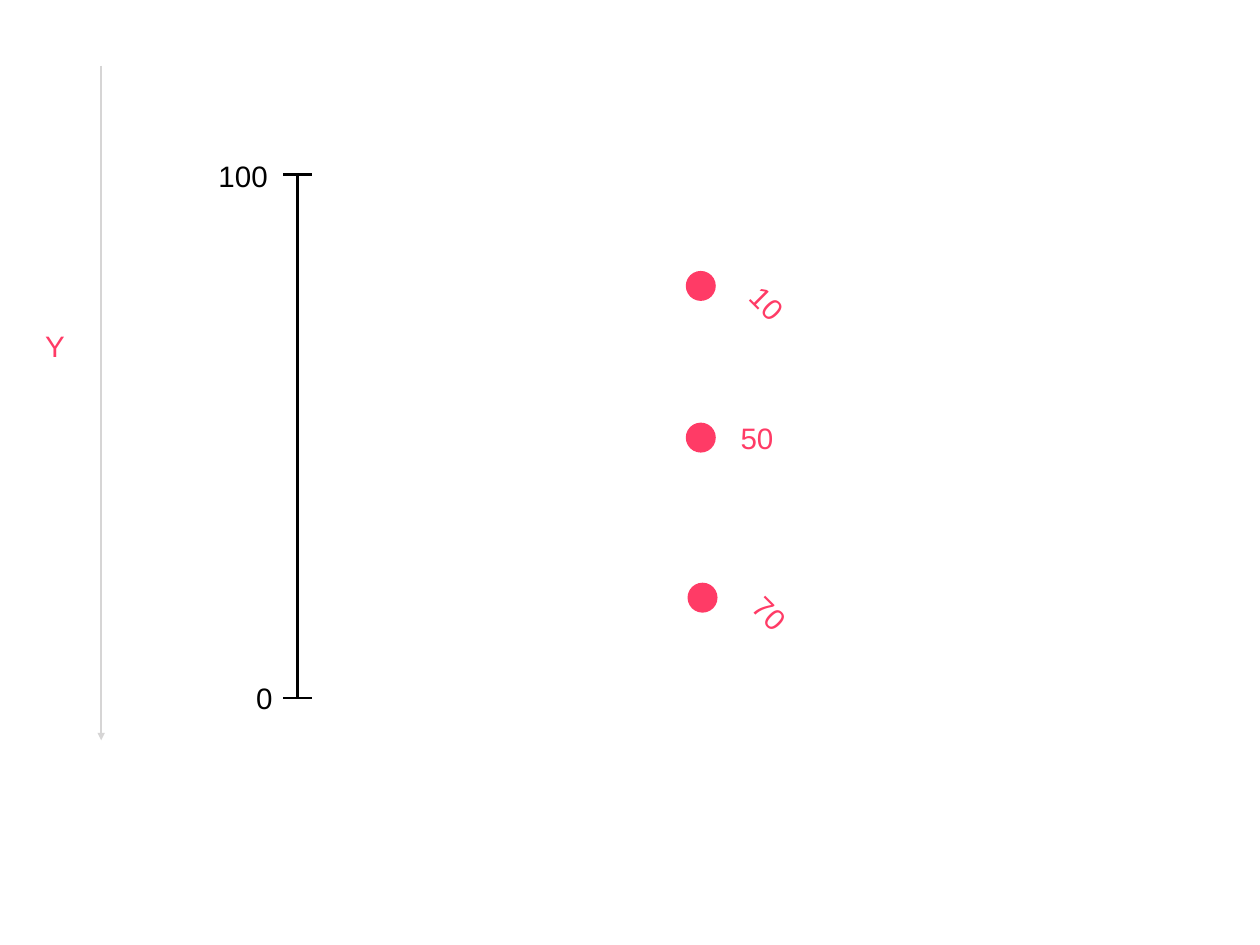
"""Build a slide with a vertical scale and three labelled points."""
import dataclasses

import lxml.etree
import pptx
import pptx.dml.color
import pptx.enum.shapes
import pptx.enum.text
import pptx.oxml.ns
import pptx.shapes.shapetree
import pptx.util

Cm = pptx.util.Cm
Shapes = pptx.shapes.shapetree._BaseGroupShapes


@dataclasses.dataclass(frozen=True)
class Theme:
    accent: str = "FF3B66"
    ink: str = "000000"
    guide: str = "D6D5D5"
    paper: str = "FFFFFF"
    font: str = "Arial"
    text_size: float = 24
    line_width: float = 2


@dataclasses.dataclass(frozen=True)
class Label:
    text: str
    center_x: float
    center_y: float
    width: float
    color: str
    rotation: float = 0


@dataclasses.dataclass(frozen=True)
class Point:
    center_x: float
    center_y: float
    label: Label


@dataclasses.dataclass(frozen=True)
class Line:
    start_x: float
    start_y: float
    end_x: float
    end_y: float
    color: str
    arrow: bool = False


THEME = Theme()
LABEL_HEIGHT = 1.12
LABEL_INSET = 0.15
DOT_SIZE = 0.86
SCALE_X = 8.53
SCALE_TOP = 5.0
SCALE_BOTTOM = 20.02
TICK_HALF = 0.41

POINTS = [
    Point(20.09, 8.2, Label("10", 22.0, 8.69, 1.4, THEME.accent, 45)),
    Point(20.09, 12.55, Label("50", 21.7, 12.55, 1.4, THEME.accent)),
    Point(20.14, 17.14, Label("70", 22.07, 17.58, 1.4, THEME.accent, 45)),
]
DIRECTION = Line(2.9, 1.88, 2.9, 21.23, THEME.guide, arrow=True)
DIRECTION_LABEL = Label("Y", 1.55, 9.91, 0.81, THEME.accent)
SCALE_LABELS = [
    Label("0", 7.58, SCALE_BOTTOM, 0.89, THEME.ink),
    Label("100", 6.97, SCALE_TOP + 0.05, 1.8, THEME.ink),
]


def rgb(color: str) -> pptx.dml.color.RGBColor:
    return pptx.dml.color.RGBColor.from_string(color)


def draw_label(shapes: Shapes, label: Label) -> None:
    box = shapes.add_textbox(
        Cm(label.center_x - label.width / 2),
        Cm(label.center_y - LABEL_HEIGHT / 2),
        Cm(label.width),
        Cm(LABEL_HEIGHT),
    )
    box.rotation = label.rotation
    frame = box.text_frame
    frame.word_wrap = False
    frame.auto_size = pptx.enum.text.MSO_AUTO_SIZE.SHAPE_TO_FIT_TEXT
    frame.vertical_anchor = pptx.enum.text.MSO_ANCHOR.MIDDLE
    frame.margin_left = frame.margin_right = Cm(LABEL_INSET)
    frame.margin_top = frame.margin_bottom = Cm(LABEL_INSET)
    para = frame.paragraphs[0]
    para.alignment = pptx.enum.text.PP_ALIGN.CENTER
    span = para.add_run()
    span.text = label.text
    span.font.name = THEME.font
    span.font.size = pptx.util.Pt(THEME.text_size)
    span.font.color.rgb = rgb(label.color)


def draw_line(shapes: Shapes, line: Line) -> None:
    connector = shapes.add_connector(
        pptx.enum.shapes.MSO_CONNECTOR.STRAIGHT,
        Cm(line.start_x),
        Cm(line.start_y),
        Cm(line.end_x),
        Cm(line.end_y),
    )
    connector.line.color.rgb = rgb(line.color)
    connector.line.width = pptx.util.Pt(THEME.line_width)
    qualified = pptx.oxml.ns.qn
    properties = connector._element.spPr
    if line.arrow:
        outline = properties.find(qualified("a:ln"))
        lxml.etree.SubElement(outline, qualified("a:tailEnd"), type="triangle")
    lxml.etree.SubElement(properties, qualified("a:effectLst"))


def draw_point(shapes: Shapes, point: Point) -> None:
    group = shapes.add_group_shape()
    dot = group.shapes.add_shape(
        pptx.enum.shapes.MSO_SHAPE.OVAL,
        Cm(point.center_x - DOT_SIZE / 2),
        Cm(point.center_y - DOT_SIZE / 2),
        Cm(DOT_SIZE),
        Cm(DOT_SIZE),
    )
    dot.shadow.inherit = False
    dot.fill.solid()
    dot.fill.fore_color.rgb = rgb(THEME.accent)
    dot.line.fill.background()
    draw_label(group.shapes, point.label)


def draw_scale(shapes: Shapes) -> None:
    group = shapes.add_group_shape()
    draw_line(group.shapes, Line(SCALE_X, SCALE_BOTTOM, SCALE_X, SCALE_TOP, THEME.ink))
    for label in SCALE_LABELS:
        draw_label(group.shapes, label)
    for level in (SCALE_BOTTOM, SCALE_TOP):
        tick = Line(SCALE_X + TICK_HALF, level, SCALE_X - TICK_HALF, level, THEME.ink)
        draw_line(group.shapes, tick)


def main() -> None:
    deck = pptx.Presentation()
    deck.slide_width = Cm(36.12)
    deck.slide_height = Cm(27.1)
    page = deck.slides.add_slide(deck.slide_layouts[6])
    page.background.fill.solid()
    page.background.fill.fore_color.rgb = rgb(THEME.paper)
    for point in POINTS:
        draw_point(page.shapes, point)
    draw_line(page.shapes, DIRECTION)
    draw_label(page.shapes, DIRECTION_LABEL)
    draw_scale(page.shapes)
    deck.save("out.pptx")


if __name__ == "__main__":
    main()
